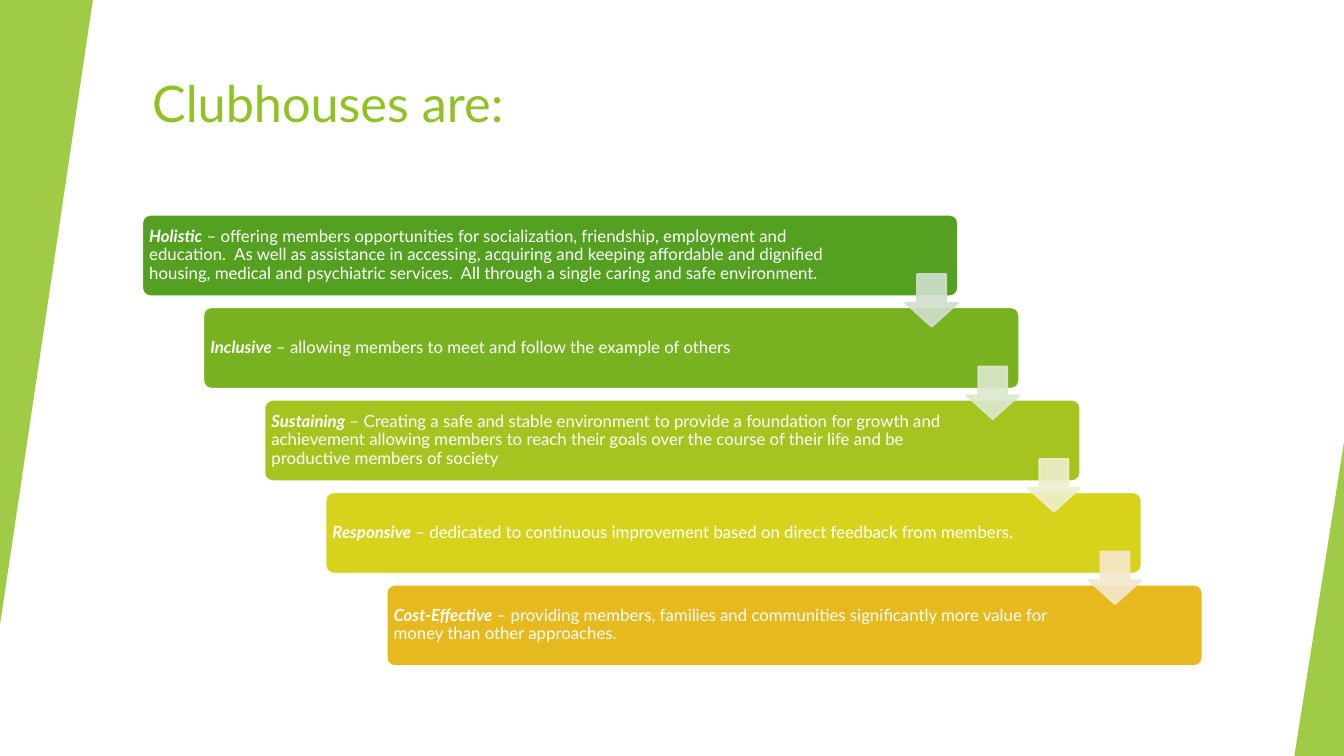
from lxml import etree
from pptx import Presentation
from pptx import util as u
from pptx.dml.color import RGBColor
from pptx.enum import shapes, text
from pptx.oxml.ns import qn

FONT = "Lato"
GREEN = "90C226"
WHITE = "FFFFFF"


def paint(part, fill, line=None, opacity=100):
    part.shadow.inherit = False
    part.fill.solid()
    part.fill.fore_color.rgb = RGBColor.from_string(fill)
    if line:
        part.line.color.rgb = RGBColor.from_string(line)
        part.line.width = u.Pt(1.5)
    else:
        part.line.fill.background()
    if opacity < 100:
        for color in part._element.spPr.iter(qn("a:srgbClr")):
            etree.SubElement(color, qn("a:alpha"), val=str(opacity * 1000))


def add_run(paragraph, words, size, color, strong=False):
    run = paragraph.add_run()
    run.text = words
    run.font.name = FONT
    run.font.size = u.Pt(size)
    run.font.bold = run.font.italic = strong
    run.font.color.rgb = RGBColor.from_string(color)


prs = Presentation()
prs.slide_width, prs.slide_height = u.Cm(33.87), u.Cm(19.05)
slide = prs.slides.add_slide(prs.slide_layouts[5])

# Title
title = slide.shapes.title
title.left, title.top, title.width, title.height = u.Cm(3.58), u.Cm(1.7), u.Cm(28.32), u.Cm(3.05)
title.text_frame.vertical_anchor = text.MSO_ANCHOR.TOP
heading = title.text_frame.paragraphs[0]
heading.alignment = text.PP_ALIGN.LEFT
add_run(heading, "Clubhouses are:", 36, GREEN)

# Green wedges at both edges
for left, top, width, height, turn in [(0, 0, 2.34, 15.75, 180), (32.62, 11.15, 1.25, 7.9, 0)]:
    wedge = slide.shapes.add_shape(shapes.MSO_SHAPE.ISOSCELES_TRIANGLE,
                                   u.Cm(left), u.Cm(top), u.Cm(width), u.Cm(height))
    wedge.adjustments[0] = 1
    wedge.rotation = turn
    paint(wedge, GREEN, opacity=85)

# Staircase of qualities: name, description, bar colour, right inset
qualities = [
    ("Holistic", " – offering members opportunities for socialization, friendship, employment and "
     "education.  As well as assistance in accessing, acquiring and keeping affordable and dignified "
     "housing, medical and psychiatric services.  All through a single caring and safe environment.",
     "54A021", 2.44),
    ("Inclusive", " – allowing members to meet and follow the example of others", "79B220", 3.02),
    ("Sustaining", " – Creating a safe and stable environment to provide a foundation for growth and "
     "achievement allowing members to reach their goals over the course of their life and be "
     "productive members of society", "A5C41F", 3.02),
    ("Responsive", " – dedicated to continuous improvement based on direct feedback from members.",
     "D7D31D", 3.02),
    ("Cost-Effective", " – providing members, families and communities significantly more value for "
     "money than other approaches.", "E6B91E", 3.02),
]
first_left, first_top = 3.58, 5.41
step_right, step_down = 1.54, 2.33

for i, (quality, description, color, right_inset) in enumerate(qualities):
    bar = slide.shapes.add_shape(shapes.MSO_SHAPE.ROUNDED_RECTANGLE,
                                 u.Cm(first_left + i * step_right), u.Cm(first_top + i * step_down),
                                 u.Cm(20.57), u.Cm(2.06))
    bar.adjustments[0] = 0.1
    paint(bar, color, WHITE)
    frame = bar.text_frame
    frame.word_wrap = True
    frame.vertical_anchor = text.MSO_ANCHOR.MIDDLE
    frame.margin_left = frame.margin_top = frame.margin_bottom = u.Cm(0.12)
    frame.margin_right = u.Cm(right_inset)
    statement = frame.paragraphs[0]
    statement.alignment = text.PP_ALIGN.LEFT
    statement.line_spacing = 0.9
    add_run(statement, quality, 12, WHITE, strong=True)
    add_run(statement, description, 12, WHITE)

# Arrows leading from each bar to the next
for i, tint in enumerate(["D1DFCD", "DCE8CC", "EEEFCC", "F5E7CD"]):
    arrow = slide.shapes.add_shape(shapes.MSO_SHAPE.DOWN_ARROW,
                                   u.Cm(first_left + 19.24 + i * step_right),
                                   u.Cm(first_top + 1.5 + i * step_down), u.Cm(1.32), u.Cm(1.32))
    arrow.adjustments[0] = 0.55
    arrow.adjustments[1] = 0.45
    paint(arrow, tint, tint, opacity=90)

prs.save("out.pptx")
